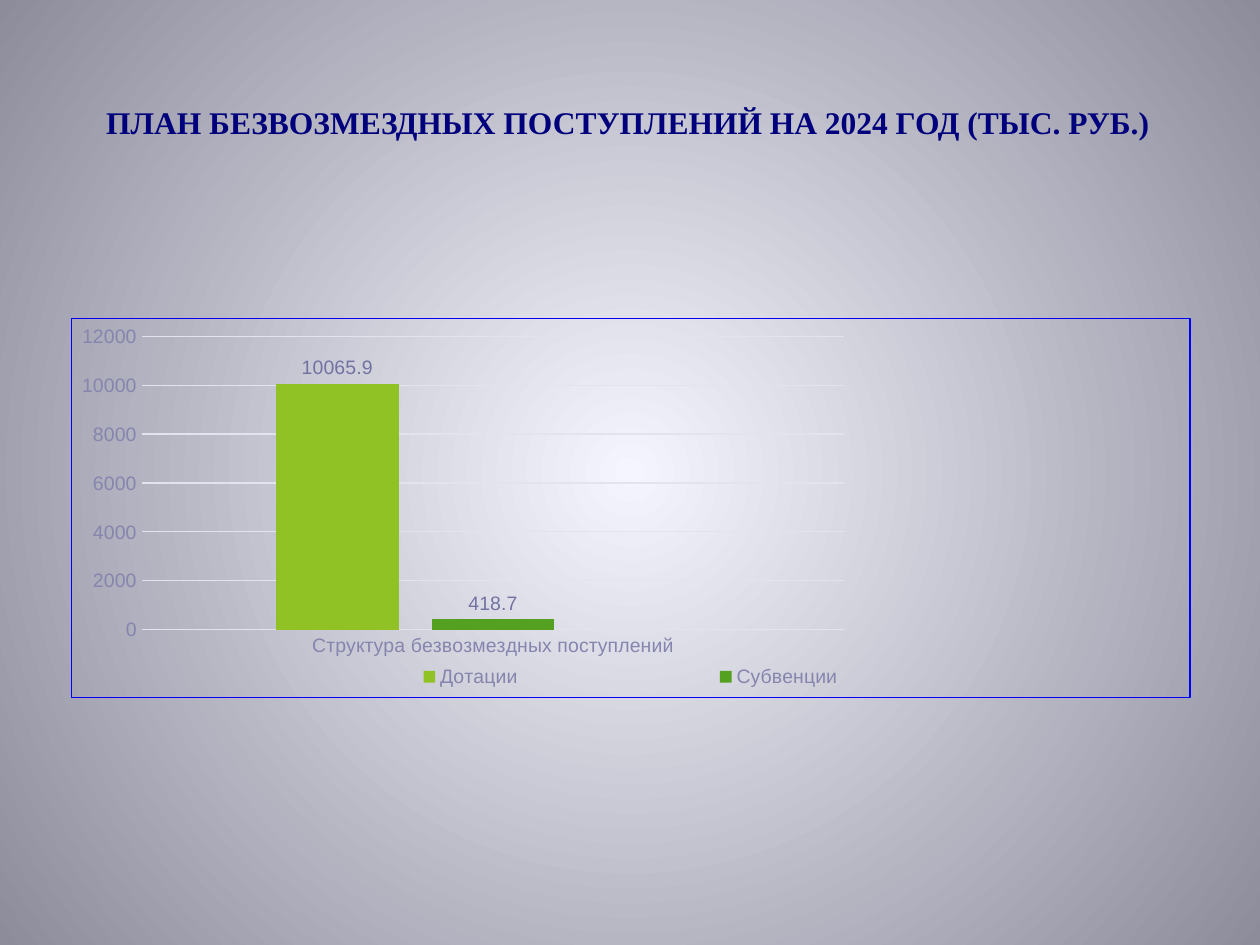
from lxml.etree import SubElement
from pptx import Presentation
from pptx.chart.data import CategoryChartData
from pptx.dml.color import RGBColor
from pptx.enum.chart import XL_CHART_TYPE, XL_LABEL_POSITION, XL_LEGEND_POSITION, XL_TICK_MARK
from pptx.enum.text import MSO_ANCHOR, PP_ALIGN
from pptx.oxml import parse_xml
from pptx.oxml.ns import nsdecls, qn
from pptx.util import Inches, Pt

WIDTH, HEIGHT = Inches(10), Inches(7.5)
COLORS = {
    "centre": "F5F5FF", "edge": "8C8C9B", "title": "00007C", "text": "4F4F77",
    "axis": "8585AE", "value": "7272A2", "grid": "E3E3EC", "border": "0000F9",
}
CATEGORY = "Структура безвозмездных поступлений"
RECEIPTS = [
    ("Дотации", 10065.9, "90C226"),
    ("Субвенции", 418.7, "54A021"),
    ("Series 3", None, "E6B91E"),
]


def rgb(name):
    return RGBColor.from_string(COLORS[name])


def share(left, top, width, height):
    """Turn shares of the slide into a position and a size."""
    return [round(v) for v in (left * WIDTH, top * HEIGHT, width * WIDTH, height * HEIGHT)]


def format_font(font, color, size=11.1, name="Arial", bold=False):
    font.size, font.name, font.bold = Pt(size), name, bold
    font.color.rgb = rgb(color)


def write_text(frame, text, align=PP_ALIGN.CENTER, anchor=MSO_ANCHOR.MIDDLE, **font_format):
    frame.word_wrap = True
    frame.vertical_anchor = anchor
    paragraph = frame.paragraphs[0]
    paragraph.alignment = align
    run = paragraph.add_run()
    run.text = text
    format_font(run.font, **font_format)


def paint_background(slide):
    """Fill the background with a gradient that spreads from the centre."""
    fill = slide.background.fill
    fill.gradient()
    for stop, position, color in zip(fill.gradient_stops, (0, 1), ("centre", "edge")):
        stop.position = position
        stop.color.rgb = rgb(color)
    linear = next(slide.element.iter(qn("a:lin")))
    gradient = linear.getparent()
    gradient.replace(linear, parse_xml(
        f'<a:path {nsdecls("a")} path="circle">'
        '<a:fillToRect l="50000" t="50000" r="50000" b="50000"/></a:path>'))


def add_title(slide, text):
    title = slide.shapes.title
    title.left, title.top, title.width, title.height = share(0.033, 0.033, 0.931, 0.193)
    write_text(title.text_frame, text, color="title", size=18, name="Times New Roman", bold=True)


def manual_layout(x, y, w, h, inner=False):
    layout = parse_xml(f'<c:layout {nsdecls("c")}><c:manualLayout/></c:layout>')
    values = [("layoutTarget", "inner")] if inner else []
    values += [("xMode", "edge"), ("yMode", "edge"), ("x", x), ("y", y), ("w", w), ("h", h)]
    for tag, value in values:
        SubElement(layout[0], qn(f"c:{tag}")).set("val", str(value))
    return layout


def drop_layout(element):
    for layout in element.findall(qn("c:layout")):
        element.remove(layout)


def style_axes(chart):
    for axis in (chart.category_axis, chart.value_axis):
        axis.major_tick_mark = axis.minor_tick_mark = XL_TICK_MARK.NONE
        format_font(axis.tick_labels.font, "axis")
    chart.value_axis.format.line.fill.background()
    chart.value_axis.has_major_gridlines = True
    for line in (chart.category_axis.format.line, chart.value_axis.major_gridlines.format.line):
        line.color.rgb = rgb("grid")
        line.width = Pt(0.7)


def style_columns(plot):
    plot.gap_width, plot.overlap = 219, -27
    plot.vary_by_categories = False
    for series, (_, _, color) in zip(plot.series, RECEIPTS):
        series.format.fill.solid()
        series.format.fill.fore_color.rgb = RGBColor.from_string(color)
        labels = series.data_labels
        labels.show_value = True
        labels.position = XL_LABEL_POSITION.OUTSIDE_END
        format_font(labels.font, "value")


def style_legend(chart, hidden):
    """Lay the legend out as a row below the plot, without the hidden entry."""
    chart.has_legend = True
    chart.legend.position = XL_LEGEND_POSITION.RIGHT
    chart.legend.include_in_layout = False
    format_font(chart.legend.font, "axis")
    legend = chart.element.find(f".//{qn('c:legend')}")
    drop_layout(legend)
    overlay = legend.find(qn("c:overlay"))
    overlay.addprevious(parse_xml(
        f'<c:legendEntry {nsdecls("c")}><c:idx val="{hidden}"/><c:delete val="1"/></c:legendEntry>'))
    overlay.addprevious(manual_layout(0.14, 0.9, 0.72, 0.09))


def add_receipts_chart(slide):
    data = CategoryChartData()
    data.categories = [CATEGORY]
    for name, value, _ in RECEIPTS:
        data.add_series(name, [value])
    chart = slide.shapes.add_chart(
        XL_CHART_TYPE.COLUMN_CLUSTERED, *share(0.056, 0.336, 0.889, 0.403), data).chart
    chart.has_title = False
    format_font(chart.font, "text", size=10)
    style_axes(chart)
    style_columns(chart.plots[0])
    style_legend(chart, hidden=2)
    plot_area = chart.element.find(f".//{qn('c:plotArea')}")
    drop_layout(plot_area)
    plot_area.insert(0, manual_layout(0.063, 0.048, 0.628, 0.773, inner=True))
    chart.element.find(qn("c:chart")).addnext(parse_xml(
        f'<c:spPr {nsdecls("c", "a")}><a:noFill/><a:ln w="{Pt(0.75)}"><a:solidFill>'
        f'<a:srgbClr val="{COLORS["border"]}"/></a:solidFill></a:ln></c:spPr>'))


def main():
    deck = Presentation()
    deck.slide_width, deck.slide_height = WIDTH, HEIGHT
    slide = deck.slides.add_slide(deck.slide_layouts[5])
    paint_background(slide)
    add_title(slide, "ПЛАН БЕЗВОЗМЕЗДНЫХ ПОСТУПЛЕНИЙ НА 2024 ГОД (ТЫС. РУБ.)")
    add_receipts_chart(slide)
    deck.save("out.pptx")


if __name__ == "__main__":
    main()
